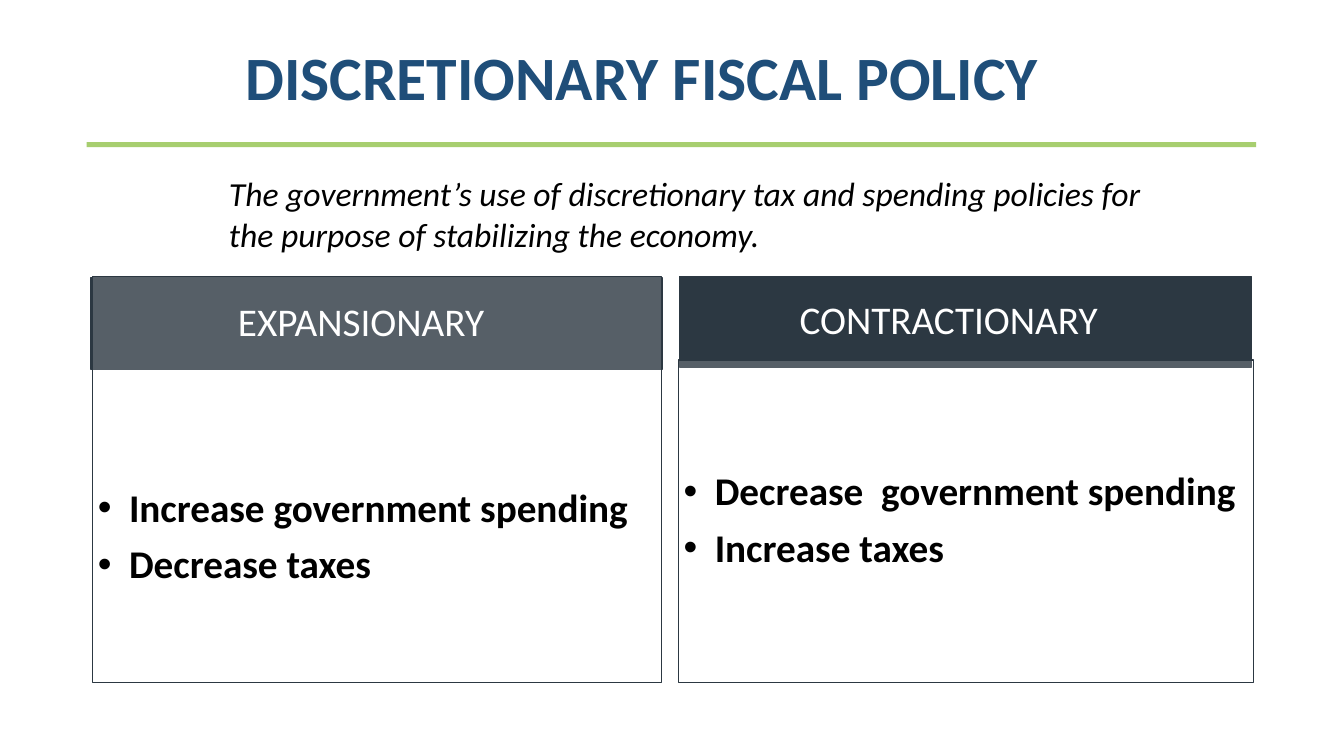
from pptx import Presentation
from pptx import util as u
from pptx.dml import color
from pptx.enum import shapes, text
from pptx.oxml import ns
from lxml import etree

INK = "2C3842"
PAD = 0.05


def rgb(value):
    """Return a colour from a hex string."""
    return color.RGBColor.from_string(value)


def place(sp, box):
    """Move a shape to a left, top, width, height box in inches."""
    sp.left, sp.top, sp.width, sp.height = map(u.Inches, box)


def add_child(parent, tag, **attrs):
    """Append a DrawingML element with attributes."""
    return etree.SubElement(parent, ns.qn(tag), **attrs)


def write(sp, lines, size, ink, bold=False, italic=False, align=text.PP_ALIGN.LEFT,
          anchor=text.MSO_ANCHOR.TOP, left=0, hang=0, spacing=1, before=0, top=PAD):
    """Fill a shape with equally formatted paragraphs."""
    tf = sp.text_frame
    tf.word_wrap = True
    tf.auto_size = text.MSO_AUTO_SIZE.NONE
    tf.vertical_anchor = anchor
    tf.margin_left = tf.margin_right = tf.margin_bottom = u.Inches(PAD)
    tf.margin_top = u.Inches(top)
    for i, line in enumerate(lines):
        p = tf.paragraphs[0] if i == 0 else tf.add_paragraph()
        p.text = line
        p.alignment = align
        p.line_spacing = spacing
        p.space_before = u.Pt(before if i else 0)
        p.space_after = u.Pt(0)
        pPr = p._p.get_or_add_pPr()
        pPr.set("marL", str(u.Inches(left)))
        pPr.set("indent", str(u.Inches(-hang)))
        if hang:
            add_child(pPr, "a:buFont", typeface="Arial")
            add_child(pPr, "a:buChar", char="•")
        else:
            add_child(pPr, "a:buNone")
        p.font.name = "Calibri"
        p.font.size = u.Pt(size)
        p.font.bold = bold
        p.font.italic = italic
        p.font.color.rgb = rgb(ink)


def paint(sp, fill, opacity=100):
    """Give a shape its fill, opacity and dark outline."""
    sp.fill.solid()
    sp.fill.fore_color.rgb = rgb(fill)
    if opacity < 100:
        clr = sp.fill._xPr.find(".//" + ns.qn("a:srgbClr"))
        add_child(clr, "a:alpha", val=str(opacity * 1000))
    sp.line.color.rgb = rgb(INK)
    sp.line.width = u.Pt(1)


def heading(s, box):
    """Place the title, the rule and the definition."""
    x, y, w, h = box
    rule = s.shapes.add_shape(shapes.MSO_SHAPE.RECTANGLE, 0, 0, 0, 0)
    place(rule, (x, y + 1.07, w, 0.05))
    rule.shadow.inherit = False
    rule.fill.solid()
    rule.fill.fore_color.rgb = rgb("A7CE6F")
    rule.line.fill.background()
    place(s.shapes.title, (x + 0.71, y, 8.85, 0.84))
    write(s.shapes.title, ["DISCRETIONARY FISCAL POLICY"], 44, "1F4E79", bold=True,
          align=text.PP_ALIGN.CENTER, left=0.75)
    sp = s.shapes.add_textbox(0, 0, 0, 0)
    place(sp, (x + 1.36, y + 1.33, 9.31, h - 1.33))
    write(sp, ["The government’s use of discretionary tax and spending policies "
               "for the purpose of stabilizing the economy."], 24, "000000", italic=True)


def policy(header, panel, header_box, panel_box, name, actions, indent, top=PAD):
    """Place one policy's header and its panel of actions."""
    style = dict(anchor=text.MSO_ANCHOR.MIDDLE, spacing=0.9, before=10)
    place(header, header_box)
    paint(header, INK)
    write(header, [name], 28, "FFFFFF", left=indent, **style)
    place(panel, panel_box)
    paint(panel, "FFFFFF", 20)
    write(panel, actions, 28, "000000", bold=True, left=0.31, hang=0.31, top=top, **style)


def main():
    """Build and save the slide."""
    prs = Presentation()
    prs.slide_width, prs.slide_height = u.Inches(13.33), u.Inches(7.5)
    s = prs.slides.add_slide(prs.slide_layouts[4])
    ph = {sp.placeholder_format.idx: sp for sp in s.placeholders}
    heading(s, (0.86, 0.34, 11.6, 2.24))
    policy(ph[1], ph[2], (0.9, 2.76, 5.67, 0.9), (0.92, 2.74, 5.64, 4.03), "EXPANSIONARY",
           ["Increase government spending", "Decrease taxes"], 1.41, top=1.21)
    policy(ph[3], ph[4], (6.74, 2.74, 5.67, 0.9), (6.73, 3.57, 5.7, 3.2), "CONTRACTIONARY",
           ["Decrease  government spending", "Increase taxes"], 1.14)
    prs.save("out.pptx")


if __name__ == "__main__":
    main()
